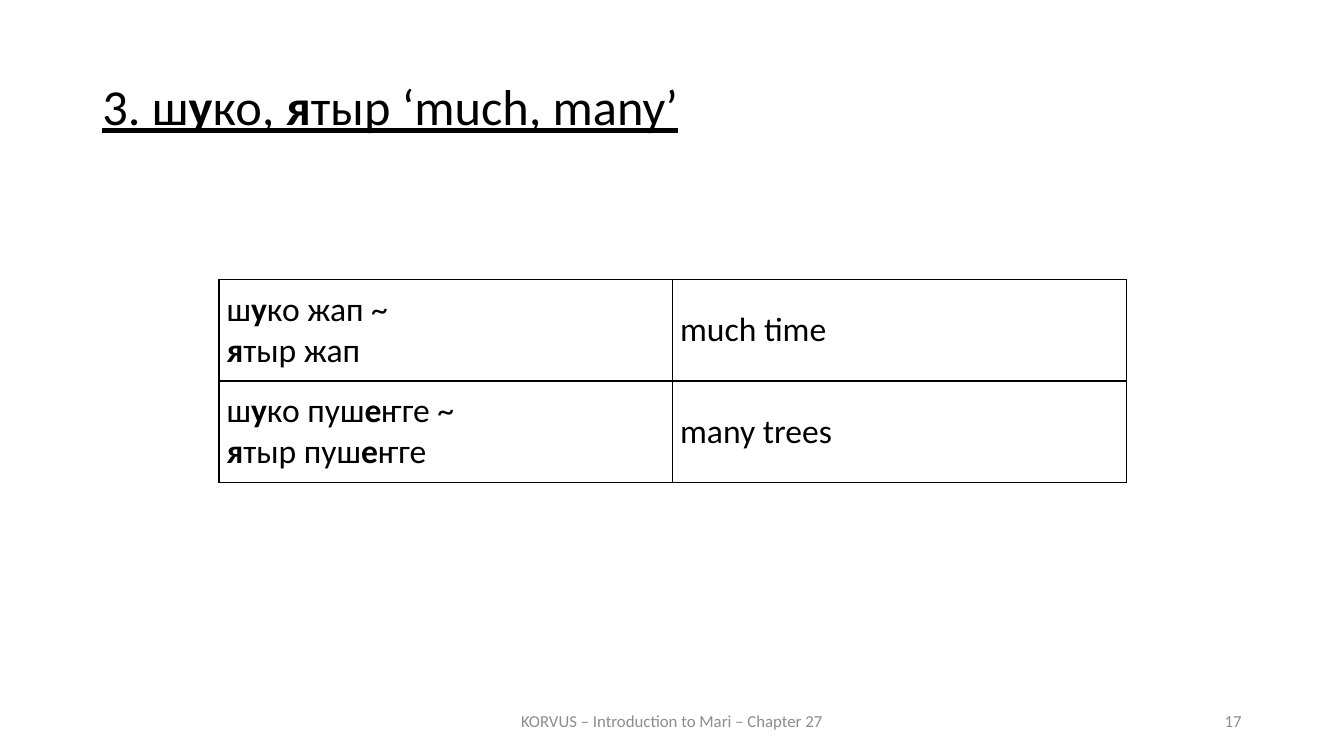
"""Build a slide on Mari quantifiers with a two-column example table."""
from lxml.etree import SubElement
from pptx import Presentation
from pptx.dml.color import RGBColor
from pptx.enum.text import MSO_ANCHOR as Anchor, PP_ALIGN as Align
from pptx.oxml.ns import qn
from pptx.util import Cm, Pt


def add_runs(paragraph, marked_text, size, color, underline=None):
    """Add runs, with the parts between asterisks in bold."""
    for index, part in enumerate(marked_text.split("*")):
        if part:
            run = paragraph.add_run()
            run.text = part
            run.font.name = "Calibri"
            run.font.size = Pt(size)
            run.font.bold = index % 2 == 1
            run.font.underline = underline
            run.font.color.rgb = RGBColor.from_string(color)


def add_text(left, top, width, height, anchor, align):
    """Add a wrapping text box and return its first paragraph."""
    box = slide.shapes.add_textbox(Cm(left), Cm(top), Cm(width), Cm(height))
    box.text_frame.word_wrap = True
    box.text_frame.vertical_anchor = anchor
    paragraph = box.text_frame.paragraphs[0]
    paragraph.alignment = align
    return paragraph


presentation = Presentation()
presentation.slide_width = Cm(33.87)
presentation.slide_height = Cm(19.05)
slide = presentation.slides.add_slide(presentation.slide_layouts[6])

title = add_text(2.33, 1.93, 29.21, 2.11, Anchor.TOP, Align.JUSTIFY)
title.line_spacing = 0.9
title.space_before = Pt(12)
add_runs(title, "3. ш*у*ко, *я*тыр ‘much, many’", 36, "000000", underline=True)

examples = [
    (["ш*у*ко жап ~", "*я*тыр жап"], ["much time"]),
    (["ш*у*ко пуш*е*ҥге ~", "*я*тыр пуш*е*ҥге"], ["many trees"]),
]
table = slide.shapes.add_table(2, 2, Cm(5.52), Cm(7.04), Cm(22.86), Cm(5.12)).table
table.first_row = False
table.horz_banding = False
for row, example in enumerate(examples):
    for column, lines in enumerate(example):
        cell = table.cell(row, column)
        cell.vertical_anchor = Anchor.MIDDLE
        cell.margin_left = cell.margin_right = Cm(0.19)
        cell.margin_top = cell.margin_bottom = 0
        for index, line in enumerate(lines):
            text_frame = cell.text_frame
            paragraph = text_frame.add_paragraph() if index else text_frame.paragraphs[0]
            add_runs(paragraph, line, 24, "000000")
        properties = cell._tc.get_or_add_tcPr()
        for side in ("a:lnL", "a:lnR", "a:lnT", "a:lnB"):
            border = SubElement(properties, qn(side), w=str(Pt(1)))
            fill = SubElement(border, qn("a:solidFill"))
            SubElement(fill, qn("a:srgbClr"), val="000000")
        cell.fill.background()

footer = add_text(11.22, 17.66, 11.43, 1.01, Anchor.MIDDLE, Align.CENTER)
add_runs(footer, "KORVUS – Introduction to Mari – Chapter 27", 12, "8C8C8C")
slide_number = add_text(23.92, 17.66, 7.62, 1.01, Anchor.MIDDLE, Align.RIGHT)
add_runs(slide_number, "17", 12, "8C8C8C")

presentation.save("out.pptx")
